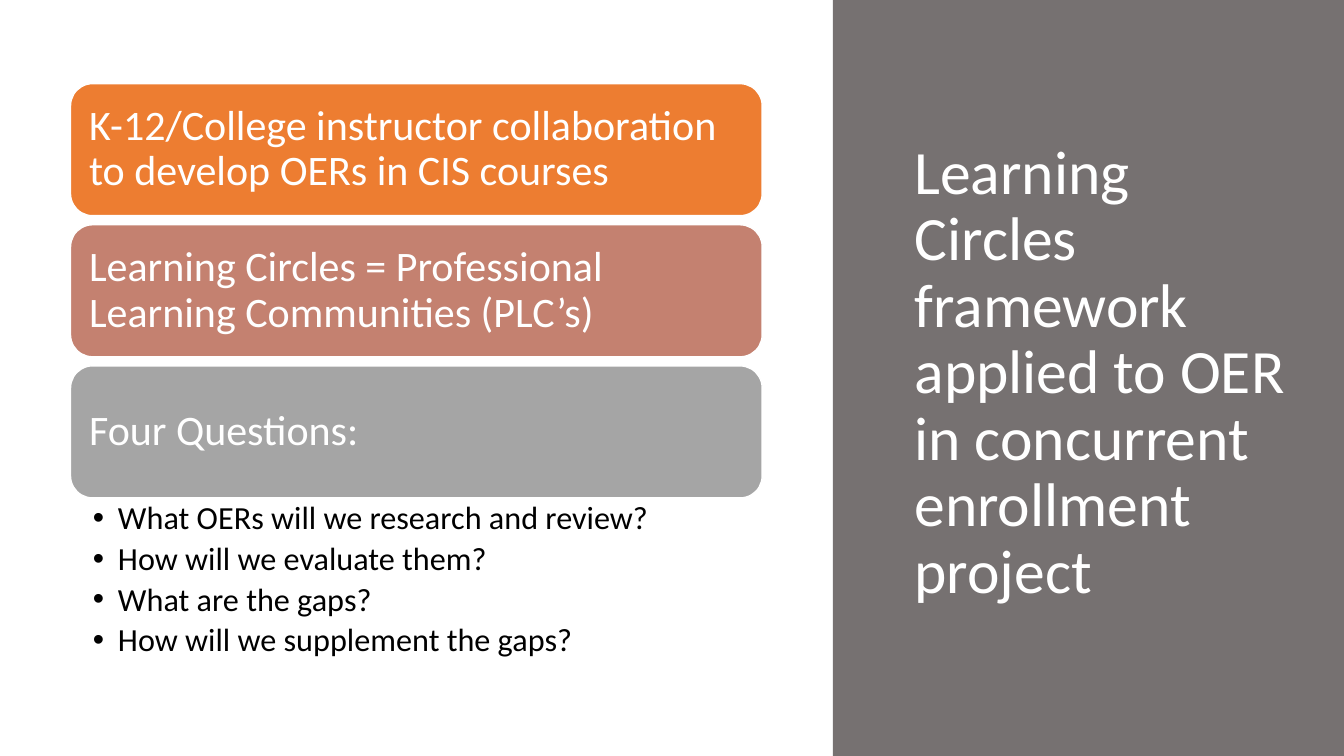
import pptx
import pptx.util
import pptx.dml.color
import pptx.enum.shapes
import pptx.enum.text
import pptx.oxml.ns
import lxml.etree

Inches = pptx.util.Inches
Pt = pptx.util.Pt
COLORS = {
    "panel": "767171",
    "orange": "ED7D31",
    "rose": "C48170",
    "gray": "A5A5A5",
    "white": "FFFFFF",
    "black": "000000",
}


def rgb(name):
    return pptx.dml.color.RGBColor.from_string(COLORS[name])


def write_text(shape, lines, size, color, insets=(0.1, 0.05, 0.1, 0.05),
               anchor="MIDDLE", space_after=0, bullet=None):
    frame = shape.text_frame
    frame.text = "\n".join(lines)
    frame.word_wrap = True
    frame.auto_size = pptx.enum.text.MSO_AUTO_SIZE.NONE
    frame.vertical_anchor = pptx.enum.text.MSO_ANCHOR[anchor]
    frame.margin_left, frame.margin_top, frame.margin_right, frame.margin_bottom = map(Inches, insets)
    for paragraph in frame.paragraphs:
        paragraph.alignment = pptx.enum.text.PP_ALIGN.LEFT
        paragraph.line_spacing = 0.9
        paragraph.space_before = Pt(0)
        paragraph.space_after = Pt(space_after)
        font = paragraph.runs[0].font
        font.name = "Calibri"
        font.size = Pt(size)
        font.color.rgb = rgb(color)
        if bullet:
            properties = paragraph.runs[0]._r.getparent().get_or_add_pPr()
            properties.set("marL", str(Inches(0.25)))
            properties.set("indent", str(-Inches(0.25)))
            mark = lxml.etree.SubElement(properties, pptx.oxml.ns.qn("a:buChar"))
            mark.set("char", bullet)


presentation = pptx.Presentation()
presentation.slide_width = Inches(13.33)
presentation.slide_height = Inches(7.5)
slide = presentation.slides.add_slide(presentation.slide_layouts[1])
title, questions = slide.placeholders

panel = slide.shapes.add_shape(
    pptx.enum.shapes.MSO_SHAPE.RECTANGLE, Inches(8.26), 0, Inches(5.07), Inches(7.5))
panel.shadow.inherit = False
panel.fill.solid()
panel.fill.fore_color.rgb = rgb("panel")
panel.line.fill.background()
slide.shapes.element.insert(2, panel.element)

title.left, title.top, title.width, title.height = map(Inches, (8.97, 0.7, 4.01, 6.02))
write_text(title, ["Learning Circles framework applied to OER in concurrent enrollment project"],
           size=44, color="white")

topics = [
    ("K-12/College instructor collaboration to develop OERs in CIS courses", "orange"),
    ("Learning Circles = Professional Learning Communities (PLC’s)", "rose"),
    ("Four Questions:", "gray"),
]
for index, (topic, color) in enumerate(topics):
    card = slide.shapes.add_shape(
        pptx.enum.shapes.MSO_SHAPE.ROUNDED_RECTANGLE,
        Inches(0.7), Inches(0.83 + 1.4 * index), Inches(6.86), Inches(1.31))
    card.shadow.inherit = False
    card.fill.solid()
    card.fill.fore_color.rgb = rgb(color)
    card.line.color.rgb = rgb("white")
    card.line.width = Pt(1)
    write_text(card, [topic], size=30, color="white", insets=(0.12, 0.12, 0.12, 0.12))

questions.left, questions.top, questions.width, questions.height = map(Inches, (0.7, 4.94, 6.86, 1.73))
write_text(questions, [
    "What OERs will we research and review?",
    "How will we evaluate them?",
    "What are the gaps?",
    "How will we supplement the gaps?",
], size=23, color="black", insets=(0.22, 0.04, 0.23, 0.04), anchor="TOP",
    space_after=4.2, bullet="•")

presentation.save("out.pptx")
